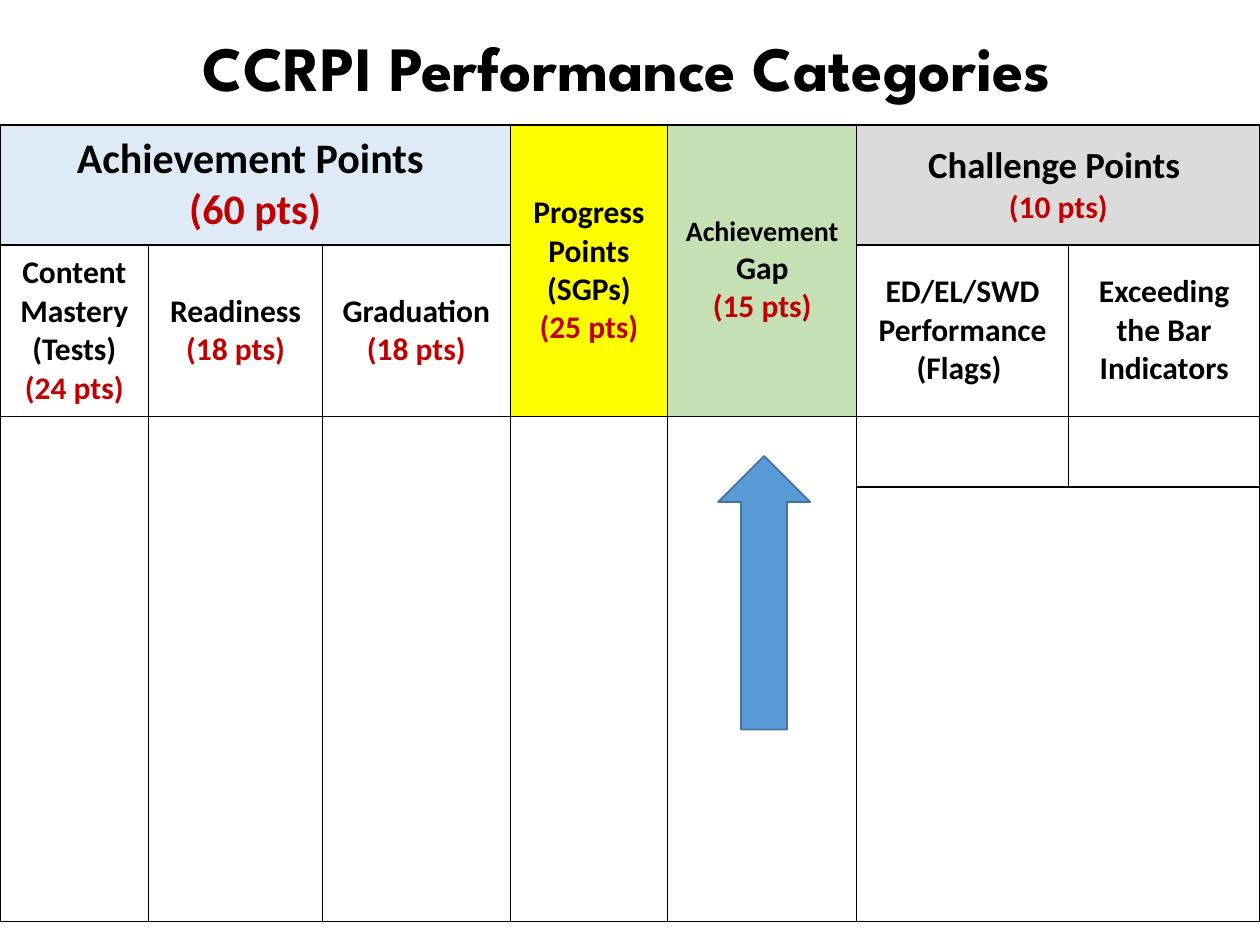
from lxml import etree
from pptx import Presentation
from pptx.dml.color import RGBColor
from pptx.enum.shapes import MSO_SHAPE as SHAPE
from pptx.enum.text import MSO_ANCHOR as ANCHOR, PP_ALIGN as ALIGN
from pptx.oxml.ns import qn
from pptx.util import Inches, Pt

BLACK, RED, WHITE = "000000", "C00000", "FFFFFF"
COLS = [1.18, 1.38, 1.49, 1.25, 1.5, 1.68, 1.52]
ROWS = [0.92, 1.36, 0.56, 3.45]

# (row, column, rows spanned, columns spanned, fill, paragraphs of (text, size) runs)
HEADERS = [
    (0, 0, 1, 3, "DEEBF7", [[("Achievement Points ", 24)], [("(60 pts)", 24)]]),
    (0, 3, 2, 1, "FFFF00", ["Progress Points", "(SGPs)", "(25 pts)"]),
    (0, 4, 2, 1, "C5E0B4", [[("Achievement ", 16), ("Gap", 18)], "(15 pts)"]),
    (0, 5, 1, 2, "DBDBDB", [[("Challenge Points ", 21)], "(10 pts)"]),
    (1, 0, 1, 1, WHITE, ["Content", "Mastery", "(Tests)", "(24 pts)"]),
    (1, 1, 1, 1, WHITE, ["Readiness", "(18 pts)"]),
    (1, 2, 1, 1, WHITE, ["Graduation", "(18 pts)"]),
    (1, 5, 1, 1, WHITE, ["ED/EL/SWD", "Performance", "(Flags) "]),
    (1, 6, 1, 1, WHITE, ["Exceeding the Bar Indicators"]),
]


def rgb(value):
    return RGBColor.from_string(value)


def add_run(p, text, size=18, font="Calibri", color=BLACK, bold=True):
    r = p.add_run()
    r.text = text
    r.font.size = Pt(size)
    r.font.name = font
    r.font.bold = bold
    r.font.color.rgb = rgb(color)


def add_borders(cell, color=BLACK, width=1):
    """Put the four border lines ahead of the cell's fill."""
    tc_pr = cell._tc.get_or_add_tcPr()
    for i, side in enumerate(("lnL", "lnR", "lnT", "lnB")):
        ln = etree.Element(qn(f"a:{side}"), w=str(Pt(width)))
        fill = etree.SubElement(ln, qn("a:solidFill"))
        etree.SubElement(fill, qn("a:srgbClr"), val=color)
        tc_pr.insert(i, ln)


def fill_header(cell, fill, paragraphs):
    cell.fill.solid()
    cell.fill.fore_color.rgb = rgb(fill)
    tf = cell.text_frame
    for i, runs in enumerate(paragraphs):
        p = tf.paragraphs[0] if i == 0 else tf.add_paragraph()
        p.alignment = ALIGN.CENTER
        for text, size in [(runs, 18)] if isinstance(runs, str) else runs:
            color = RED if text.endswith("pts)") else BLACK
            add_run(p, text, size=size, color=color)


def add_title(slide, x, y, w, h):
    tf = slide.shapes.add_textbox(Inches(x), Inches(y), Inches(w), Inches(h)).text_frame
    tf.word_wrap = True
    p = tf.paragraphs[0]
    p.alignment = ALIGN.CENTER
    add_run(p, "CCRPI Performance Categories", size=36, font="League Spartan")


def add_categories(slide, x, y, w, h):
    table = slide.shapes.add_table(len(ROWS), len(COLS), Inches(x), Inches(y),
                                   Inches(w), Inches(h)).table
    table.first_row = table.horz_banding = False
    for column, width in zip(table.columns, COLS):
        column.width = Inches(width)
    for row, height in zip(table.rows, ROWS):
        row.height = Inches(height)

    # Plain bordered grid
    for cell in table.iter_cells():
        cell.fill.background()
        cell.vertical_anchor = ANCHOR.MIDDLE
        cell.margin_left = cell.margin_right = Inches(0.13)
        cell.margin_top = cell.margin_bottom = Inches(0.07)
        add_borders(cell)

    # Category headings
    for row, col, n_rows, n_cols, fill, paragraphs in HEADERS:
        cell = table.cell(row, col)
        if n_rows * n_cols > 1:
            cell.merge(table.cell(row + n_rows - 1, col + n_cols - 1))
        fill_header(cell, fill, paragraphs)

    # Empty body areas
    for col in range(5):
        table.cell(2, col).merge(table.cell(3, col))
    table.cell(3, 5).merge(table.cell(3, 6))


def add_gap_arrow(slide, x, y, w, h):
    sp = slide.shapes.add_shape(SHAPE.UP_ARROW, Inches(x), Inches(y), Inches(w), Inches(h))
    sp.shadow.inherit = False
    sp.fill.solid()
    sp.fill.fore_color.rgb = rgb("5B9BD5")
    sp.line.color.rgb = rgb("43739E")
    sp.line.width = Pt(1)


def main():
    prs = Presentation()
    prs.slide_width, prs.slide_height = Inches(10), Inches(7.5)
    slide = prs.slides.add_slide(prs.slide_layouts[6])
    add_categories(slide, 0, 0.99, sum(COLS), sum(ROWS))
    add_title(slide, 0.43, 0.18, 9.09, 0.72)
    add_gap_arrow(slide, 5.7, 3.62, 0.73, 2.17)
    prs.save("out.pptx")


if __name__ == "__main__":
    main()
